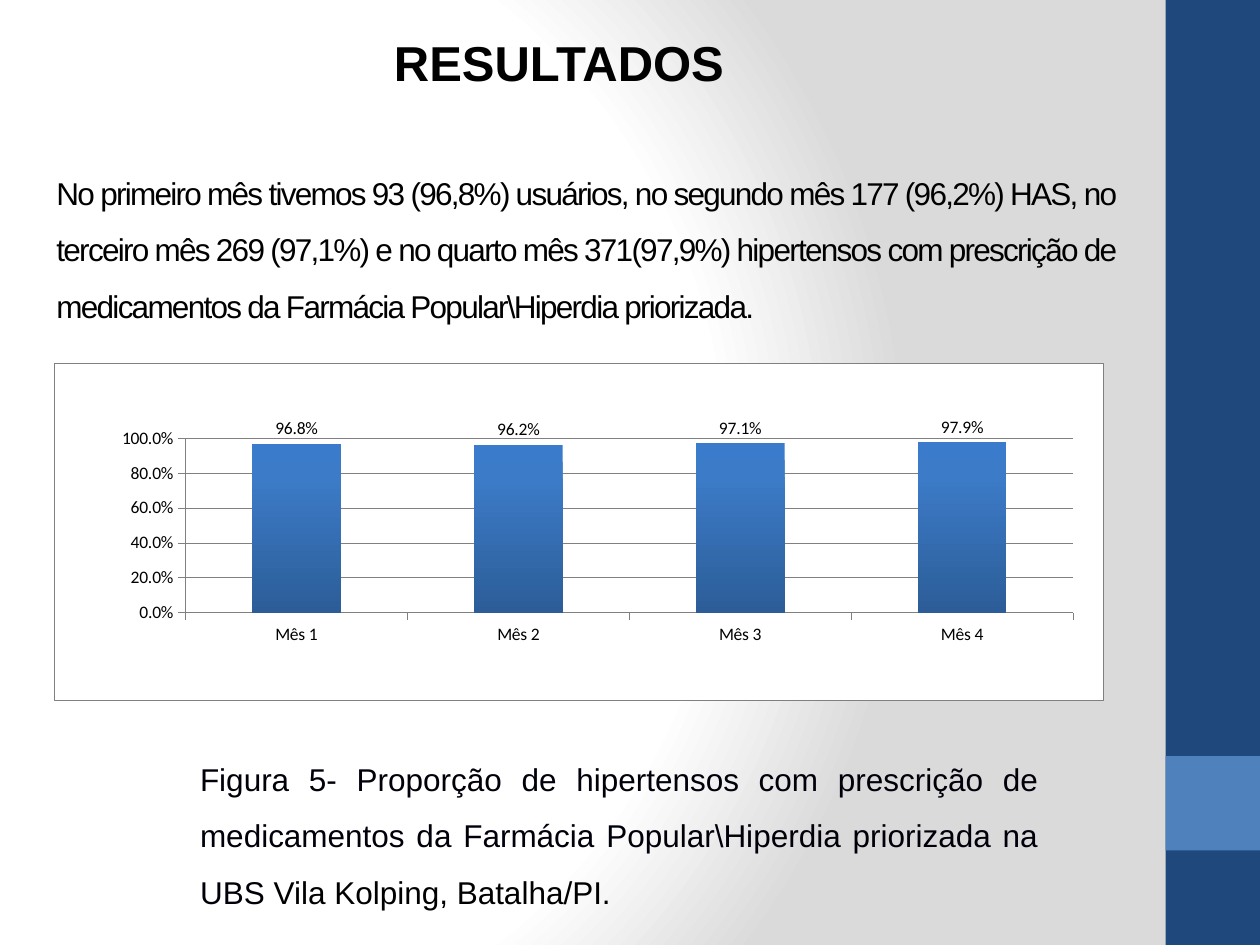
from lxml import etree
from pptx import Presentation
from pptx.chart.data import CategoryChartData
from pptx.dml.color import RGBColor
from pptx.enum.chart import XL_CHART_TYPE, XL_LABEL_POSITION, XL_TICK_MARK
from pptx.enum.shapes import MSO_SHAPE
from pptx.enum.text import MSO_ANCHOR, PP_ALIGN
from pptx.oxml import parse_xml
from pptx.oxml.ns import nsdecls, qn
from pptx.util import Inches, Pt

NAVY = RGBColor(0x1F, 0x49, 0x7D)
BLUE = RGBColor(0x4F, 0x81, 0xBD)
BLACK = RGBColor(0, 0, 0)
INK = RGBColor(0, 0, 0x0A)
GRAY = RGBColor(0x80, 0x80, 0x80)
WHITE = RGBColor(0xFF, 0xFF, 0xFF)
LIGHT_GRAY = RGBColor(0xDA, 0xDA, 0xDA)
BAR_TOP = RGBColor(0x3A, 0x7C, 0xCB)
BAR_UPPER = RGBColor(0x3C, 0x7B, 0xC7)
BAR_BOTTOM = RGBColor(0x2C, 0x5D, 0x98)

COLUMN = XL_CHART_TYPE.COLUMN_CLUSTERED
OUTSIDE_END = XL_LABEL_POSITION.OUTSIDE_END
TICK_OUTSIDE = XL_TICK_MARK.OUTSIDE
RECTANGLE = MSO_SHAPE.RECTANGLE
TOP = MSO_ANCHOR.TOP
MIDDLE = MSO_ANCHOR.MIDDLE
LEFT = PP_ALIGN.LEFT
CENTER = PP_ALIGN.CENTER
JUSTIFY = PP_ALIGN.JUSTIFY

TITLE_ONLY = 5
HAIRLINE = Pt(0.25)
PERCENT = "0.0%"


def set_gradient(fill, owner, stops, direction):
    fill.gradient()
    gradient = owner.find(".//" + qn("a:gradFill"))
    for child in list(gradient):
        gradient.remove(child)
    stop_list = etree.SubElement(gradient, qn("a:gsLst"))
    for position, color in stops:
        stop = etree.SubElement(stop_list, qn("a:gs"), pos=str(position * 1000))
        etree.SubElement(stop, qn("a:srgbClr"), val=str(color))
    gradient.append(parse_xml(direction))


def area_format(border=None):
    line = (
        f'<a:ln w="{HAIRLINE}"><a:solidFill><a:srgbClr val="{border}"/></a:solidFill></a:ln>'
        if border is not None
        else ""
    )
    return parse_xml(
        f'<c:spPr {nsdecls("c", "a")}><a:solidFill><a:srgbClr val="{WHITE}"/>'
        f"</a:solidFill>{line}</c:spPr>"
    )


class SlideBuilder:
    def __init__(self, slide, font="Arial"):
        self.slide = slide
        self.font = font

    def background(self):
        set_gradient(
            self.slide.background.fill,
            self.slide._element,
            [(0, WHITE), (75, WHITE), (100, LIGHT_GRAY)],
            f'<a:path {nsdecls("a")} path="circle">'
            '<a:fillToRect l="20000" t="50000" r="100000" b="50000"/></a:path>',
        )

    def band(self, left, top, width, height, color):
        shape = self.slide.shapes.add_shape(
            RECTANGLE, Inches(left), Inches(top), Inches(width), Inches(height)
        )
        shape.shadow.inherit = False
        shape.fill.solid()
        shape.fill.fore_color.rgb = color
        shape.line.fill.background()

    def set_text(self, shape, runs, size, bold=False, align=LEFT, spacing=1.0, anchor=TOP):
        text_frame = shape.text_frame
        text_frame.word_wrap = True
        text_frame.vertical_anchor = anchor
        paragraph = text_frame.paragraphs[0]
        paragraph.alignment = align
        paragraph.line_spacing = spacing
        for text, color in runs:
            run = paragraph.add_run()
            run.text = text
            run.font.name = self.font
            run.font.size = Pt(size)
            run.font.bold = bold
            run.font.color.rgb = color
        return paragraph

    def title(self, left, top, width, height, text):
        shape = self.slide.shapes.title
        shape.left, shape.top = Inches(left), Inches(top)
        shape.width, shape.height = Inches(width), Inches(height)
        self.set_text(shape, [(text, BLACK)], 28, bold=True, align=CENTER, anchor=MIDDLE)

    def text(self, left, top, width, height, runs, align=LEFT):
        shape = self.slide.shapes.add_textbox(
            Inches(left), Inches(top), Inches(width), Inches(height)
        )
        return self.set_text(shape, runs, 18, align=align, spacing=1.5)

    def column_chart(self, left, top, width, height, categories, values):
        data = CategoryChartData(number_format=PERCENT)
        data.categories = categories
        data.add_series("Series 1", values)
        chart = self.slide.shapes.add_chart(
            COLUMN, Inches(left), Inches(top), Inches(width), Inches(height), data
        ).chart
        chart.has_title = False
        chart.has_legend = False
        chart.font.name = "Calibri"
        chart.font.size = Pt(10)
        chart.font.color.rgb = BLACK

        value_axis = chart.value_axis
        value_axis.minimum_scale = 0
        value_axis.maximum_scale = 1
        value_axis.major_unit = 0.2
        value_axis.tick_labels.number_format = PERCENT
        value_axis.tick_labels.number_format_is_linked = False
        for axis in (chart.category_axis, value_axis):
            axis.major_tick_mark = TICK_OUTSIDE
        for owner in (chart.category_axis, value_axis, value_axis.major_gridlines):
            owner.format.line.color.rgb = GRAY
            owner.format.line.width = HAIRLINE

        plot = chart.plots[0]
        plot.gap_width = 150
        plot.vary_by_categories = False
        plot.has_data_labels = True
        labels = plot.data_labels
        labels.show_value = True
        labels.number_format = PERCENT
        labels.number_format_is_linked = False
        labels.position = OUTSIDE_END
        series = plot.series[0]
        set_gradient(
            series.format.fill,
            series._element,
            [(0, BAR_TOP), (20, BAR_UPPER), (100, BAR_BOTTOM)],
            f'<a:lin {nsdecls("a")} ang="5400000" scaled="0"/>',
        )
        self.format_areas(chart)

    def format_areas(self, chart):
        chart_element = chart._chartSpace.find(qn("c:chart"))
        chart_element.addnext(area_format(GRAY))
        plot_area = chart_element.find(qn("c:plotArea"))
        plot_area.append(area_format())
        layout = plot_area.find(qn("c:layout"))
        if layout is None:
            layout = etree.Element(qn("c:layout"))
            plot_area.insert(0, layout)
        manual = etree.SubElement(layout, qn("c:manualLayout"))
        settings = [
            ("layoutTarget", "inner"), ("xMode", "edge"), ("yMode", "edge"),
            ("x", "0.125"), ("y", "0.223"), ("w", "0.846"), ("h", "0.517"),
        ]
        for name, value in settings:
            etree.SubElement(manual, qn("c:" + name), val=value)


def main():
    presentation = Presentation()
    presentation.slide_width = Inches(10)
    presentation.slide_height = Inches(7.5)
    slide = presentation.slides.add_slide(presentation.slide_layouts[TITLE_ONLY])
    builder = SlideBuilder(slide)

    builder.background()
    builder.band(9.25, 0, 0.75, 7.5, NAVY)
    builder.band(9.25, 6, 0.75, 0.75, BLUE)
    builder.title(2.94, 0.21, 2.99, 0.57, "RESULTADOS")

    summary = builder.text(0.35, 1.18, 8.74, 1.46, [(
        "No primeiro mês tivemos 93 (96,8%) usuários, no segundo mês 177 (96,2%) HAS, "
        "no terceiro mês 269 (97,1%) e no quarto mês 371(97,9%) hipertensos com "
        "prescrição de medicamentos da Farmácia Popular\\Hiperdia priorizada.", BLACK,
    )])
    for run in summary.runs:
        run._r.get_or_add_rPr().set("spc", "-100")

    builder.column_chart(
        0.43, 2.88, 8.33, 2.68,
        ["Mês 1", "Mês 2", "Mês 3", "Mês 4"], [0.968, 0.962, 0.971, 0.979],
    )

    caption = builder.text(0.51, 5.83, 8.43, 1.46, [
        ("Figura 5- Proporção de hipertensos com prescrição de medicamentos da "
         "Farmácia Popular\\Hiperdia priorizada na UBS", INK),
        (" Vila Kolping, Batalha/PI.", BLACK),
    ], align=JUSTIFY)
    margins = caption._p.get_or_add_pPr()
    margins.set("marL", str(Inches(0.98)))
    margins.set("marR", str(Inches(0.6)))

    presentation.save("out.pptx")


if __name__ == "__main__":
    main()
